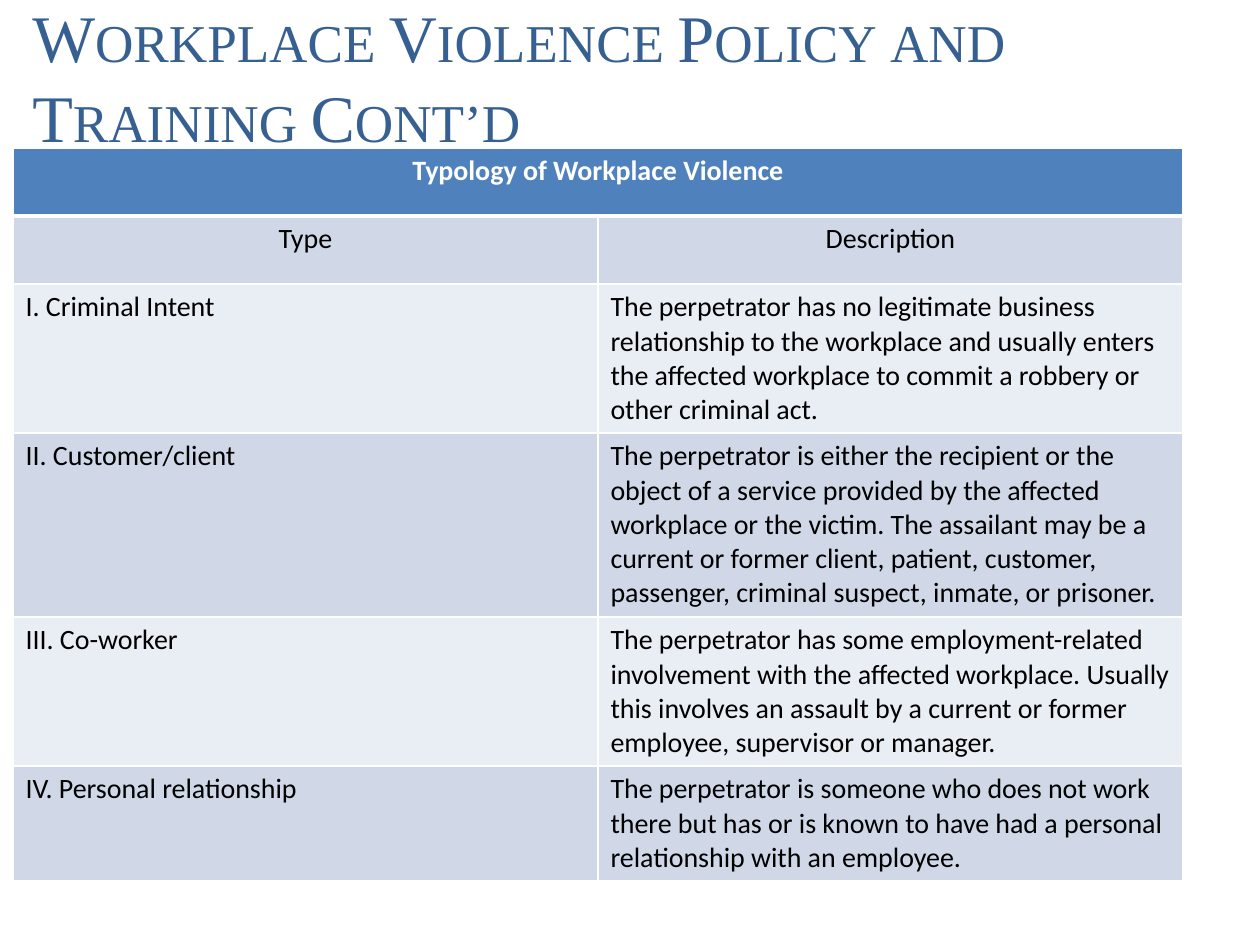
"""Build the slide on the types of workplace violence."""
from lxml.etree import SubElement
from pptx import Presentation
from pptx.dml.color import RGBColor
from pptx.enum.text import MSO_ANCHOR, PP_ALIGN
from pptx.oxml.ns import qn
from pptx.util import Pt

PX = 914400 // 126
ROWS = [
    (68, "Typology of Workplace Violence", ""),
    (68, "Type", "Description"),
    (149, "I. Criminal Intent",
     "The perpetrator has no legitimate business relationship to the workplace "
     "and usually enters the affected workplace to commit a robbery or other "
     "criminal act."),
    (184, "II. Customer/client",
     "The perpetrator is either the recipient or the object of a service "
     "provided by the affected workplace or the victim. The assailant may be a "
     "current or former client, patient, customer, passenger, criminal suspect, "
     "inmate, or prisoner."),
    (149, "III. Co-worker",
     "The perpetrator has some employment-related involvement with the affected "
     "workplace. Usually this involves an assault by a current or former "
     "employee, supervisor or manager."),
    (115, "IV. Personal relationship",
     "The perpetrator is someone who does not work there but has or is known to "
     "have had a personal relationship with an employee."),
]


def style(font, color, form):
    font.color.rgb = RGBColor.from_string(color)
    for name, value in form.items():
        setattr(font, name, value)


def border(cell, widths):
    props = cell._tc.get_or_add_tcPr()
    for side, width in zip("LRTB", widths):
        line = SubElement(props, qn("a:ln" + side), w=str(Pt(width)))
        fill = SubElement(line, qn("a:solidFill"))
        SubElement(fill, qn("a:srgbClr"), val="FFFFFF")


deck = Presentation()
deck.slide_width, deck.slide_height = 1260 * PX, 945 * PX
slide = deck.slides.add_slide(deck.slide_layouts[6])

title = slide.shapes.add_textbox(20 * PX, -10 * PX, 1085 * PX, 147 * PX)
frame = title.text_frame
frame.word_wrap = True
frame.vertical_anchor = MSO_ANCHOR.TOP
run = frame.paragraphs[0].add_run()
run.text = "Workplace Violence Policy and Training Cont’d"
style(run.font, "376092", {"name": "Times New Roman", "size": Pt(38)})
run.font._element.set("cap", "small")

high = sum(row[0] for row in ROWS)
grid = slide.shapes.add_table(
    len(ROWS), 2, 13 * PX, 148 * PX, 1170 * PX, high * PX).table
grid.cell(0, 0).merge(grid.cell(0, 1))

for r, (tall, *texts) in enumerate(ROWS):
    grid.rows[r].height = tall * PX
    head = r == 0
    shade = "4F81BD" if head else ("E9EDF4", "D0D8E8")[r % 2]
    form = {"name": "Calibri", "size": Pt(16), "bold": head}
    for c, text in enumerate(texts):
        cell = grid.cell(r, c)
        border(cell, (1, 1, 3 if r == 1 else 1, 3 if head else 1))
        cell.fill.solid()
        cell.fill.fore_color.rgb = RGBColor.from_string(shade)
        if text:
            para = cell.text_frame.paragraphs[0]
            para.alignment = PP_ALIGN.CENTER if r < 2 else PP_ALIGN.LEFT
            run = para.add_run()
            run.text = text
            style(run.font, "FFFFFF" if head else "000000", form)

deck.save("out.pptx")
